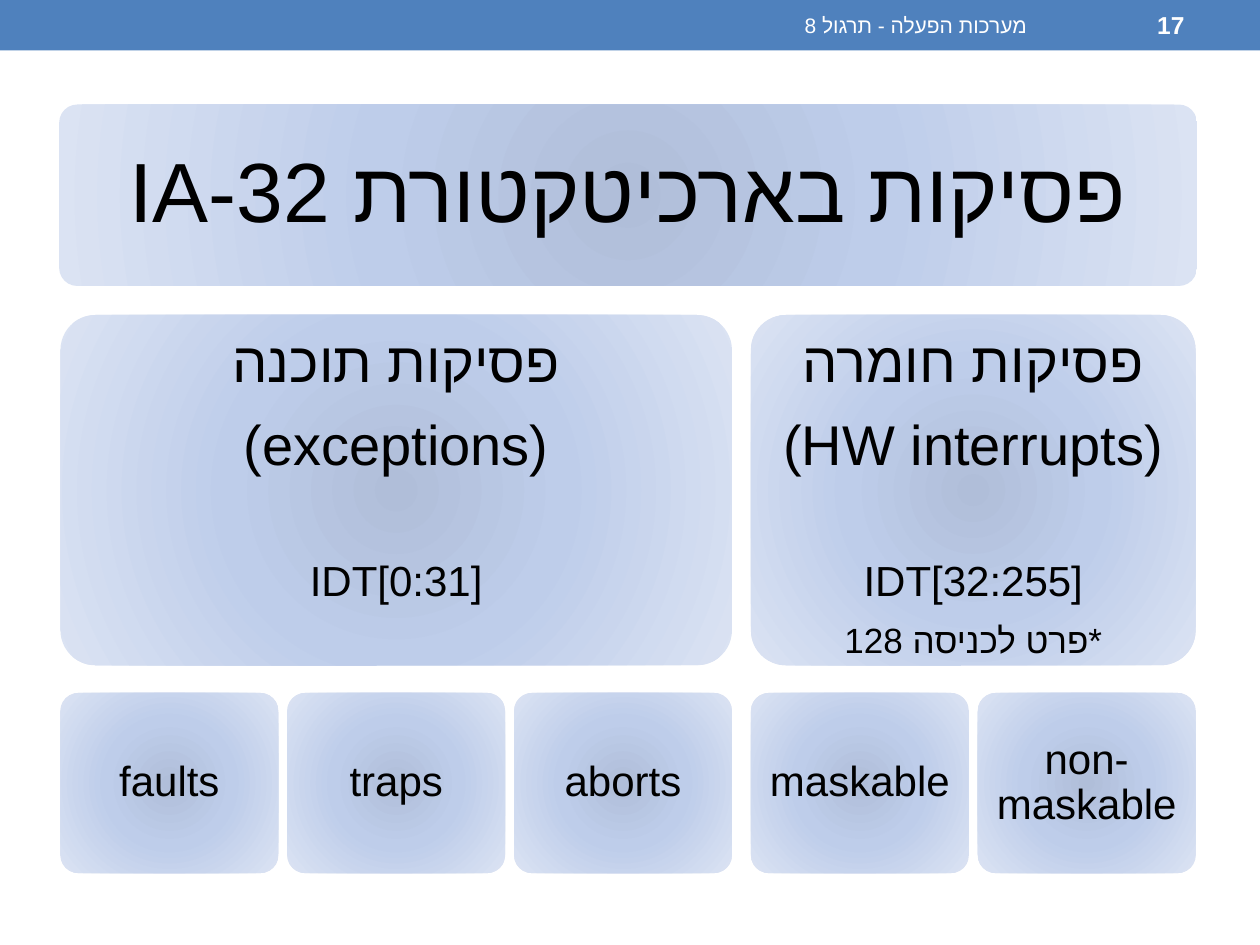
from lxml import etree
from pptx import Presentation
from pptx.dml.color import RGBColor
from pptx.enum.shapes import MSO_SHAPE
from pptx.enum.text import MSO_ANCHOR, MSO_AUTO_SIZE, PP_ALIGN
from pptx.oxml import parse_xml
from pptx.oxml.ns import qn
from pptx.util import Inches, Pt

RECT, ROUND = MSO_SHAPE.RECTANGLE, MSO_SHAPE.ROUNDED_RECTANGLE
TOP, MIDDLE = MSO_ANCHOR.TOP, MSO_ANCHOR.MIDDLE
CENTER, RIGHT = PP_ALIGN.CENTER, PP_ALIGN.RIGHT
BLUE = RGBColor(0x4F, 0x81, 0xBD)
BLACK = RGBColor(0, 0, 0)
WHITE = RGBColor(255, 255, 255)
STOPS = [(0, RGBColor(0xB0, 0xBE, 0xD9)), (45, RGBColor(0xBE, 0xCD, 0xEA)),
         (100, RGBColor(0xDB, 0xE3, 0xF3))]
FONT = "Arial"
LEFT, PITCH, WIDE, SPLIT = 0.48, 1.8, 1.73, 0.08
BANDS = [(0.83, 1.44), (2.5, 2.78), (5.5, 1.43)]
LEAVES = ["faults", "traps", "aborts", "maskable", "non-maskable"]
SOFT = [("פסיקות תוכנה", 32, 0), ("(exceptions)", 32, 0), ("IDT[0:31]", 24, 34)]
HARD = [("פסיקות חומרה", 32, 0), ("(HW interrupts)", 32, 0),
        ("IDT[32:255]", 24, 34), ("*פרט לכניסה 128", 20, 0)]


def place(col, span, band):
    """Return the box of a card that spans columns of the grid."""
    top, high = BANDS[band]
    left = LEFT + col * PITCH + (SPLIT if col > 2 else 0)
    return left, top, (span - 1) * PITCH + WIDE, high


def add_run(para, text, size, color, bold=False):
    """Add one run, right to left if it holds Hebrew."""
    run = para.add_run()
    run.text = text
    font = run.font
    font.name, font.size, font.bold = FONT, Pt(size), bold
    font.color.rgb = color
    etree.SubElement(font._element, qn("a:cs")).set("typeface", FONT)
    if any("א" <= sign <= "ת" for sign in text):
        para._p.get_or_add_pPr().set("rtl", "1")


def set_frame(frame, inset, anchor):
    """Set wrapping, margins and anchor of a text frame."""
    frame.word_wrap = True
    frame.auto_size = MSO_AUTO_SIZE.NONE
    frame.vertical_anchor = anchor
    frame.margin_left = frame.margin_right = Inches(inset)
    frame.margin_top = frame.margin_bottom = Inches(inset)


def write(frame, lines):
    """Write centred lines given as text, size and space before."""
    for i, (text, size, gap) in enumerate(lines):
        para = frame.add_paragraph() if i else frame.paragraphs[0]
        para.alignment = CENTER
        para.line_spacing = 0.9
        para.space_before = Pt(gap)
        para.space_after = Pt(round(size * 0.4))
        add_run(para, text, size, BLACK)


def add_shape(slide, kind, box):
    """Add a preset shape without line or shadow."""
    shape = slide.shapes.add_shape(kind, *map(Inches, box))
    shape.shadow.inherit = False
    shape.line.fill.background()
    return shape


def add_card(slide, box):
    """Add a rounded card with a radial gradient."""
    card = add_shape(slide, ROUND, box)
    card.adjustments[0] = 0.1
    stops = "".join(f'<a:gs pos="{pos * 1000}"><a:srgbClr val="{color}"/></a:gs>'
                    for pos, color in STOPS)
    fill = parse_xml(
        '<a:gradFill xmlns:a="http://schemas.openxmlformats.org/drawingml/2006/main">'
        f'<a:gsLst>{stops}</a:gsLst><a:path path="circle">'
        '<a:fillToRect l="100000" t="100000" r="100000" b="100000"/>'
        '</a:path></a:gradFill>')
    card._element.spPr.find(qn("a:prstGeom")).addnext(fill)
    return card


def add_title(slide, text):
    """Set the title on top of its card."""
    box = (0.47, BANDS[0][0], 9.03, BANDS[0][1])
    add_card(slide, box)
    title = slide.shapes.title
    title.left, title.top, title.width, title.height = map(Inches, box)
    set_frame(title.text_frame, 0.2, MIDDLE)
    write(title.text_frame, [(text, 48, 0)])
    slide.shapes._spTree.append(title._element)


def add_label(slide, left, width, text, size, bold=False):
    """Add a right-aligned label in the top bar."""
    box = slide.shapes.add_textbox(*map(Inches, (left, 0.02, width, 0.36)))
    set_frame(box.text_frame, 0.1, MIDDLE)
    para = box.text_frame.paragraphs[0]
    para.alignment = RIGHT
    add_run(para, text, size, WHITE, bold)


def main():
    """Build the slide and save it."""
    deck = Presentation()
    deck.slide_width, deck.slide_height = Inches(10), Inches(7.5)
    slide = deck.slides.add_slide(deck.slide_layouts[5])
    bar = add_shape(slide, RECT, (0, 0, 10, 0.4))
    bar.fill.solid()
    bar.fill.fore_color.rgb = BLUE
    add_title(slide, "פסיקות בארכיטקטורת IA-32")
    for col, span, lines in [(0, 3, SOFT), (3, 2, HARD)]:
        frame = add_card(slide, place(col, span, 1)).text_frame
        set_frame(frame, 0.13, TOP)
        frame.margin_top = Inches(0.07)
        write(frame, lines)
    for col, text in enumerate(LEAVES):
        frame = add_card(slide, place(col, 1, 2)).text_frame
        set_frame(frame, 0.1, MIDDLE)
        write(frame, [(text, 24, 0)])
    add_label(slide, 3.75, 4.5, "מערכות הפעלה - תרגול 8", 12)
    add_label(slide, 8.33, 1.17, "17", 14, True)
    deck.save("out.pptx")


if __name__ == "__main__":
    main()
